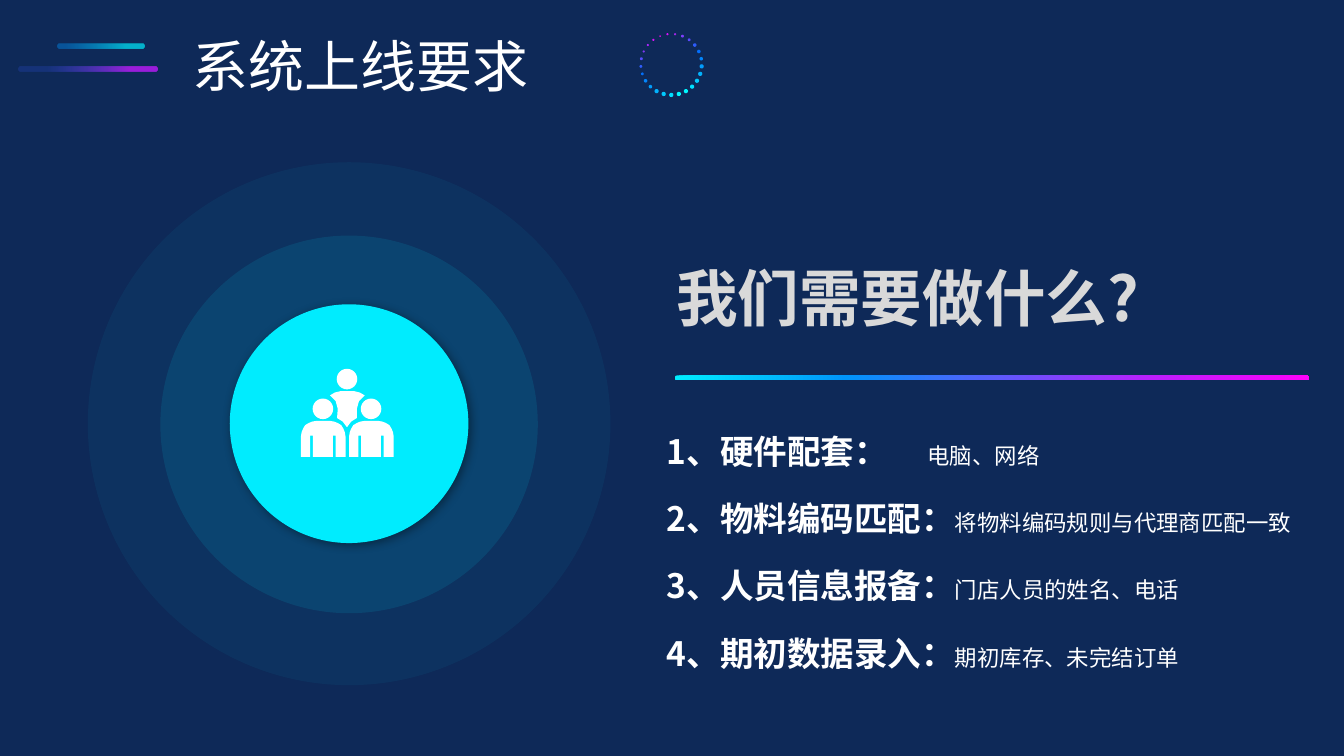
from math import cos, radians, sin

from lxml import etree
from pptx import Presentation
from pptx import util as u
from pptx.dml.color import RGBColor
from pptx.enum import shapes, text
from pptx.oxml import parse_xml
from pptx.oxml.ns import nsdecls, qn

SCALE = 9144
FONT = "Noto Sans CJK SC"
NAVY = RGBColor(0x0E, 0x29, 0x58)
CYAN = RGBColor(0x00, 0xEC, 0xFE)
BLUE = RGBColor(0x00, 0x94, 0xFA)
INDIGO = RGBColor(0x35, 0x58, 0xFB)
PURPLE = RGBColor(0xBE, 0x1D, 0xFB)
MAGENTA = RGBColor(0xFC, 0x02, 0xF9)
WHITE = RGBColor(0xFF, 0xFF, 0xFF)
GREY = RGBColor(0xD9, 0xD9, 0xD9)

RING_COLOURS = (
    "01DEFF 00F7FF 00F7FF 00DFFE 01C9FD 02B2FD 029CFD 0285FB 036EFA 2D5CFA "
    "5748FD 7D3EFC 9F26E7 D813FB FC02F9 D912FC AA27FB 7F39F6 564EFC 2E5CFB "
    "026FF9 0384FB 029CFB 02B2FD 01C9FD"
).split()
RING_SIZES = [6] * 7 + [5] * 3 + [4, 4, 3, 3, 2, 3, 3, 3] + [4] * 3 + [5, 5, 6, 6]

REQUIREMENTS = [
    ("1、硬件配套：\t", "电脑、网络"),
    ("2、物料编码匹配：", "将物料编码规则与代理商匹配一致"),
    ("3、人员信息报备：", "门店人员的姓名、电话"),
    ("4、期初数据录入：", "期初库存、未完结订单"),
]


def px(length):
    return u.Emu(round(length * SCALE))


def add_run(paragraph, content, size, color=WHITE, bold=False):
    run = paragraph.add_run()
    run.text = content
    run.font.size = u.Pt(size)
    run.font.bold = bold
    run.font.name = FONT
    run.font.color.rgb = color
    east_asian = etree.SubElement(run.font._element, qn("a:ea"))
    east_asian.set("typeface", FONT)


def arc(center_x, center_y, radius, start, end):
    return [
        (center_x + radius * cos(radians(angle)), center_y + radius * sin(radians(angle)))
        for angle in range(start, end + 1, 15)
    ]


class Canvas:
    def __init__(self, presentation):
        self.slide = presentation.slides.add_slide(presentation.slide_layouts[6])
        self.slide.background.fill.solid()
        self.slide.background.fill.fore_color.rgb = NAVY

    def paint(self, shape, color, alpha=100):
        shape.shadow.inherit = False
        shape.line.fill.background()
        shape.fill.solid()
        shape.fill.fore_color.rgb = color
        if alpha < 100:
            color_element = shape._element.spPr.find(".//" + qn("a:srgbClr"))
            etree.SubElement(color_element, qn("a:alpha")).set("val", str(alpha * 1000))

    def circle(self, center_x, center_y, diameter, color, alpha=100):
        shape = self.slide.shapes.add_shape(
            shapes.MSO_SHAPE.OVAL,
            px(center_x - diameter / 2), px(center_y - diameter / 2),
            px(diameter), px(diameter),
        )
        self.paint(shape, color, alpha)
        return shape

    def cast_shadow(self, shape):
        effects = shape._element.spPr.find(qn("a:effectLst"))
        effects.append(parse_xml(
            f'<a:outerShdw {nsdecls("a")} blurRad="127000" dist="38100" dir="2700000" '
            'algn="tl" rotWithShape="0"><a:srgbClr val="000000">'
            '<a:alpha val="40000"/></a:srgbClr></a:outerShdw>'
        ))

    def gradient_bar(self, left, top, width, stops):
        shape = self.slide.shapes.add_shape(
            shapes.MSO_SHAPE.ROUNDED_RECTANGLE, px(left), px(top), px(width), px(7)
        )
        shape.adjustments[0] = 0.42
        self.paint(shape, stops[0][1])
        stop_xml = "".join(
            f'<a:gs pos="{position * 1000}"><a:srgbClr val="{color}">'
            f'<a:alpha val="{alpha * 1000}"/></a:srgbClr></a:gs>'
            for position, color, alpha in stops
        )
        properties = shape._element.spPr
        properties.replace(properties.find(qn("a:solidFill")), parse_xml(
            f'<a:gradFill {nsdecls("a")} rotWithShape="1"><a:gsLst>{stop_xml}</a:gsLst>'
            '<a:lin ang="0" scaled="0"/></a:gradFill>'
        ))

    def outline(self, points, color):
        builder = self.slide.shapes.build_freeform(*points[0], scale=SCALE)
        builder.add_line_segments(points[1:], close=True)
        self.paint(builder.convert_to_shape(), color)

    def textbox(self, left, top, width, height, wrap=False, anchor=text.MSO_ANCHOR.MIDDLE):
        box = self.slide.shapes.add_textbox(px(left), px(top), px(width), px(height))
        box.text_frame.word_wrap = wrap
        box.text_frame.vertical_anchor = anchor
        return box.text_frame

    def dot_ring(self, center_x, center_y, radius):
        step = 360 / len(RING_COLOURS)
        for index, (color, size) in enumerate(zip(RING_COLOURS, RING_SIZES)):
            angle = radians(index * step)
            self.circle(
                center_x + radius * sin(angle), center_y + radius * cos(angle),
                size, RGBColor.from_string(color),
            )

    def team_icon(self):
        for center_x, center_y in [(490, 535), (456, 577), (524, 577)]:
            self.circle(center_x, center_y, 29, WHITE)
        self.outline([
            (490, 603), (484, 595), (476, 590), (477, 577), (474, 566), (466, 558),
            (473, 554), (481, 552), (500, 552), (508, 554), (515, 558), (507, 566),
            (504, 577), (504, 590), (496, 595),
        ], WHITE)
        for left in (425, 493):
            legs = [
                (left + x, y)
                for x, y in [
                    (63, 645), (49, 645), (49, 615), (45, 615), (45, 645), (17, 645),
                    (17, 615), (13, 615), (13, 645), (0, 645),
                ]
            ]
            shoulders = arc(left + 22, 616, 22, 180, 270) + arc(left + 41, 616, 22, 270, 360)
            self.outline(shoulders + legs, WHITE)

    def requirement_list(self):
        frame = self.textbox(932, 603, 907, 393, wrap=True, anchor=text.MSO_ANCHOR.TOP)
        for index, (heading, detail) in enumerate(REQUIREMENTS):
            paragraph = frame.paragraphs[0] if index == 0 else frame.add_paragraph()
            paragraph.space_after = u.Pt(27.4)
            add_run(paragraph, heading, 34.1, bold=True)
            add_run(paragraph, detail, 22.8)
        tabs = etree.SubElement(frame.paragraphs[0]._p.get_or_add_pPr(), qn("a:tabLst"))
        etree.SubElement(tabs, qn("a:tab"), pos=str(px(368)), algn="l")


def main():
    presentation = Presentation()
    presentation.slide_width, presentation.slide_height = px(1898), px(1067)
    canvas = Canvas(presentation)

    canvas.circle(493, 598, 738, CYAN, alpha=5)
    canvas.circle(493, 599, 533, CYAN, alpha=10)
    canvas.cast_shadow(canvas.circle(493, 598, 337, CYAN))
    canvas.team_icon()
    canvas.dot_ring(948, 91, 43)

    canvas.gradient_bar(26, 94, 196, [(21, INDIGO, 20), (80, PURPLE, 80)])
    canvas.gradient_bar(81, 62, 123, [(10, BLUE, 40), (79, CYAN, 70)])
    canvas.gradient_bar(953, 530, 896, [
        (0, CYAN, 100), (27, BLUE, 100), (76, PURPLE, 100), (100, MAGENTA, 100),
    ])

    title = canvas.textbox(262, 39, 499, 106)
    add_run(title.paragraphs[0], "系统上线要求", 56.9)
    question = canvas.textbox(909, 362, 726, 115)
    question.paragraphs[0].alignment = text.PP_ALIGN.CENTER
    add_run(question.paragraphs[0], " 我们需要做什么?", 62.6, color=GREY, bold=True)
    canvas.requirement_list()

    presentation.save("out.pptx")


if __name__ == "__main__":
    main()
